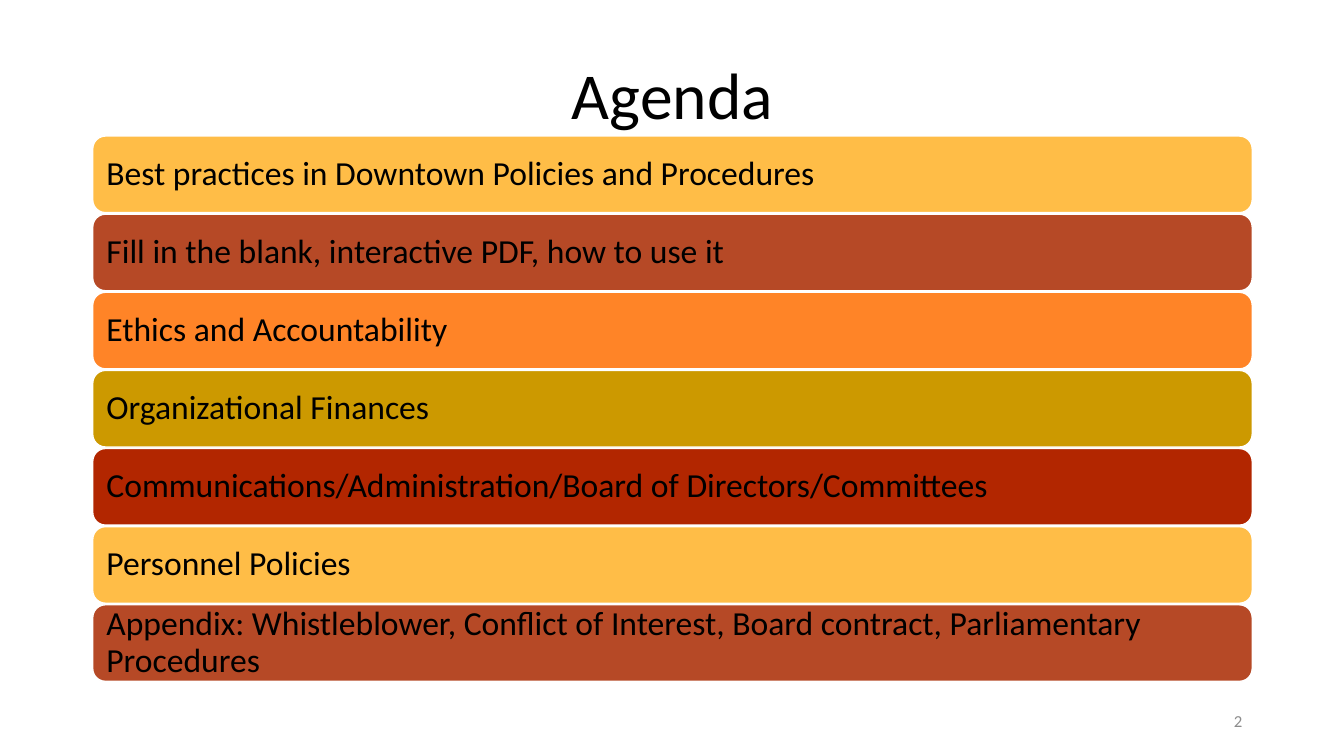
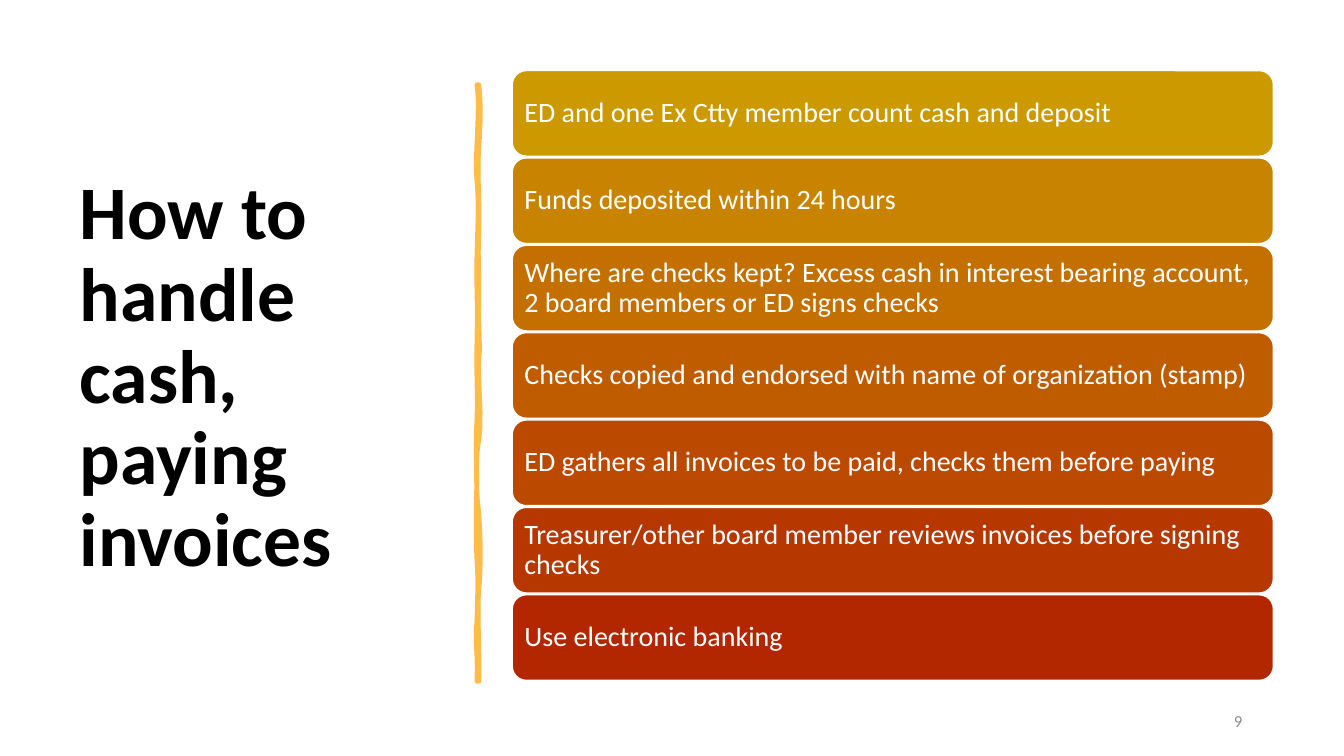
import pptx
import pptx.util
import pptx.dml.color
import pptx.enum.shapes
import pptx.enum.text

Inches = pptx.util.Inches
Pt = pptx.util.Pt
RGBColor = pptx.dml.color.RGBColor
PP_ALIGN = pptx.enum.text.PP_ALIGN
MIDDLE = pptx.enum.text.MSO_ANCHOR.MIDDLE

FONT = "Calibri"
BLACK = RGBColor(0x00, 0x00, 0x00)
WHITE = RGBColor(0xFF, 0xFF, 0xFF)
GRAY = RGBColor(0x8C, 0x8C, 0x8C)
YELLOW = RGBColor(0xFF, 0xBD, 0x47)
RUST = RGBColor(0xB6, 0x49, 0x26)
ORANGE = RGBColor(0xFF, 0x84, 0x27)
GOLD = RGBColor(0xCC, 0x99, 0x00)
RED = RGBColor(0xB2, 0x26, 0x00)
GOLD_TO_RED = [GOLD, RGBColor(0xC8, 0x84, 0x00), RGBColor(0xC3, 0x70, 0x00),
               RGBColor(0xBF, 0x5C, 0x00), RGBColor(0xBB, 0x49, 0x00),
               RGBColor(0xB6, 0x37, 0x00), RED]

# Bézier points of the hand-drawn divider: a start, then three points per curve
DIVIDER = [
    (4.75, 0.84),
    (4.77, 1.02), (4.77, 1.19), (4.75, 1.46), (4.73, 1.73), (4.76, 1.95), (4.75, 2.26),
    (4.74, 2.57), (4.75, 2.62), (4.75, 2.94), (4.74, 3.25), (4.77, 3.42), (4.75, 3.56),
    (4.73, 3.70), (4.79, 4.14), (4.75, 4.36), (4.71, 4.57), (4.72, 4.84), (4.75, 5.10),
    (4.77, 5.36), (4.77, 5.64), (4.75, 5.84), (4.73, 6.03), (4.76, 6.50), (4.75, 6.76),
    (4.74, 6.76), (4.73, 6.76), (4.73, 6.76), (4.74, 6.46), (4.71, 6.44), (4.73, 6.13),
    (4.74, 5.83), (4.74, 5.70), (4.73, 5.57), (4.72, 5.44), (4.72, 4.95), (4.73, 4.77),
    (4.73, 4.59), (4.71, 4.45), (4.73, 4.15), (4.74, 3.86), (4.72, 3.73), (4.73, 3.35),
    (4.74, 2.98), (4.72, 2.81), (4.73, 2.50), (4.74, 2.18), (4.75, 2.00), (4.73, 1.81),
    (4.70, 1.63), (4.77, 1.04), (4.73, 0.84), (4.74, 0.84), (4.74, 0.84), (4.75, 0.84),
]

SLIDES = [
    {
        "title": "Agenda", "title_box": (0.92, 0.61, 11.5, 0.74),
        "title_size": 46.8, "bold": False, "align": PP_ALIGN.CENTER, "number": "2",
        "left": 0.92, "width": 11.5, "height": 0.76, "first": 1.35, "last": 6.0,
        "size": 24, "color": BLACK, "inset": 0.1,
        "fills": [YELLOW, RUST, ORANGE, GOLD, RED, YELLOW, RUST],
        "items": [
            "Best practices in Downtown Policies and Procedures",
            "Fill in the blank, interactive PDF, how to use it",
            "Ethics and Accountability",
            "Organizational Finances",
            "Communications/Administration/Board of Directors/Committees",
            "Personnel Policies",
            "Appendix: Whistleblower, Conflict of Interest, Board contract, "
            "Parliamentary Procedures",
        ],
    },
    {
        "title": "How to handle cash, paying invoices", "title_box": (0.69, 0.7, 3.74, 6.11),
        "title_size": 54, "bold": True, "align": PP_ALIGN.LEFT, "number": "9",
        "left": 5.08, "width": 7.55, "height": 0.85, "first": 0.7, "last": 5.9,
        "size": 20, "color": WHITE, "inset": 0.08,
        "fills": GOLD_TO_RED,
        "items": [
            "ED and one Ex Ctty member count cash and deposit",
            "Funds deposited within 24 hours",
            "Where are checks kept? Excess cash in interest bearing account, "
            "2 board members or ED signs checks",
            "Checks copied and endorsed with name of organization (stamp)",
            "ED gathers all invoices to be paid, checks them before paying",
            "Treasurer/other board member reviews invoices before signing checks",
            "Use electronic banking",
        ],
    },
]


def set_text(sp, text, size, color, align, bold=False, spacing=0.9):
    tf = sp.text_frame
    tf.text = text
    tf.word_wrap = True
    tf.auto_size = pptx.enum.text.MSO_AUTO_SIZE.NONE
    tf.vertical_anchor = MIDDLE
    p = tf.paragraphs[0]
    p.alignment = align
    p.line_spacing = spacing
    font = p.runs[0].font
    font.name, font.size, font.bold = FONT, Pt(size), bold
    font.color.rgb = color


def curve_points(points, steps=6):
    """Return points along the chain of cubic Bézier curves."""
    result = []
    for i in range(0, len(points) - 1, 3):
        for step in range(1, steps + 1):
            t = step / steps
            weights = ((1 - t) ** 3, 3 * t * (1 - t) ** 2, 3 * t * t * (1 - t), t ** 3)
            curve = points[i:i + 4]
            result.append(tuple(sum(w * pt[axis] for w, pt in zip(weights, curve))
                                for axis in (0, 1)))
    return result


prs = pptx.Presentation()
prs.slide_width = Inches(13.33)
prs.slide_height = Inches(7.5)

for content in SLIDES:
    s = prs.slides.add_slide(prs.slide_layouts[5])
    title = s.shapes.title
    title.left, title.top, title.width, title.height = map(Inches, content["title_box"])
    set_text(title, content["title"], content["title_size"], BLACK,
             content["align"], content["bold"])

    number = s.shapes.add_textbox(Inches(9.42), Inches(6.95), Inches(3), Inches(0.4))
    set_text(number, content["number"], 12, GRAY, PP_ALIGN.RIGHT, spacing=1.0)

    pitch = (content["last"] - content["first"]) / (len(content["items"]) - 1)
    for i, (item, fill) in enumerate(zip(content["items"], content["fills"])):
        bar = s.shapes.add_shape(
            pptx.enum.shapes.MSO_SHAPE.ROUNDED_RECTANGLE,
            Inches(content["left"]), Inches(content["first"] + i * pitch),
            Inches(content["width"]), Inches(content["height"]))
        bar.shadow.inherit = False
        bar.fill.solid()
        bar.fill.fore_color.rgb = fill
        bar.line.color.rgb = WHITE
        bar.line.width = Pt(1)
        set_text(bar, item, content["size"], content["color"], PP_ALIGN.LEFT)
        tf = bar.text_frame
        tf.margin_left = tf.margin_right = Inches(content["inset"])
        tf.margin_top = tf.margin_bottom = Inches(content["inset"])

# Divider between title and bars on the last slide
start, *outline = [(Inches(x), Inches(y)) for x, y in DIVIDER[:1] + curve_points(DIVIDER)]
builder = s.shapes.build_freeform(*start)
builder.add_line_segments(outline, close=True)
divider = builder.convert_to_shape()
divider.shadow.inherit = False
divider.fill.solid()
divider.fill.fore_color.rgb = YELLOW
divider.line.color.rgb = YELLOW
divider.line.width = Pt(3.25)

prs.save("out.pptx")
